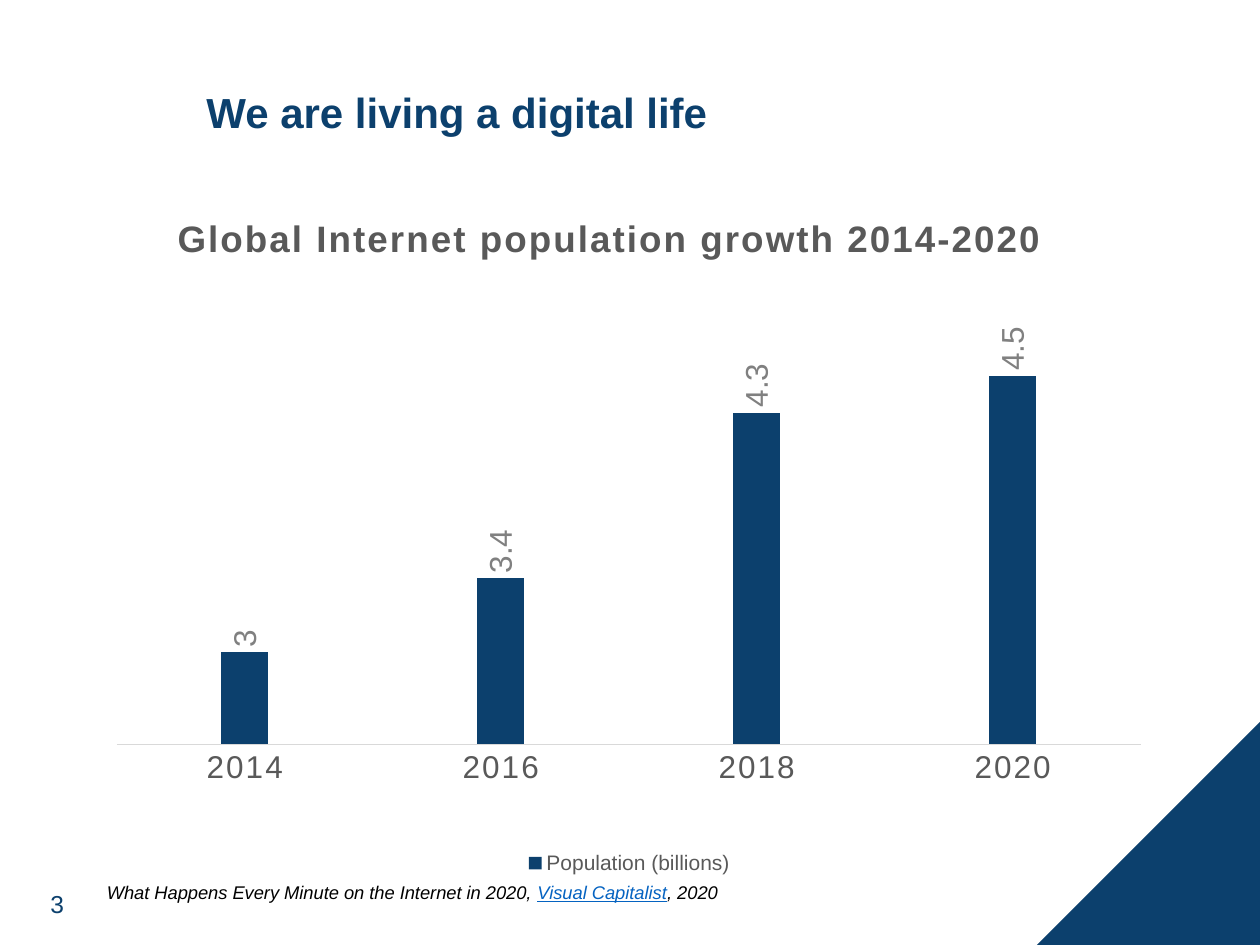
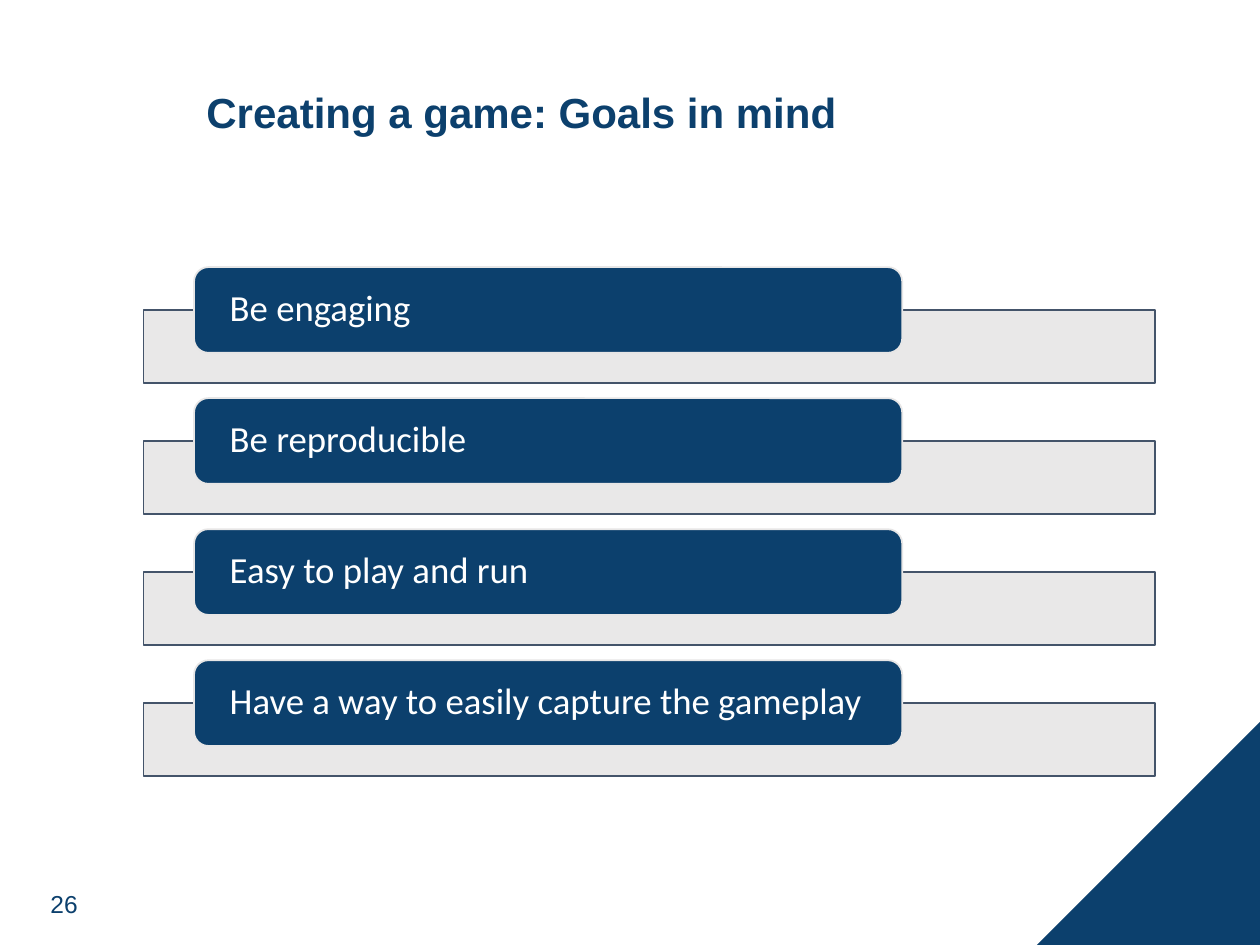
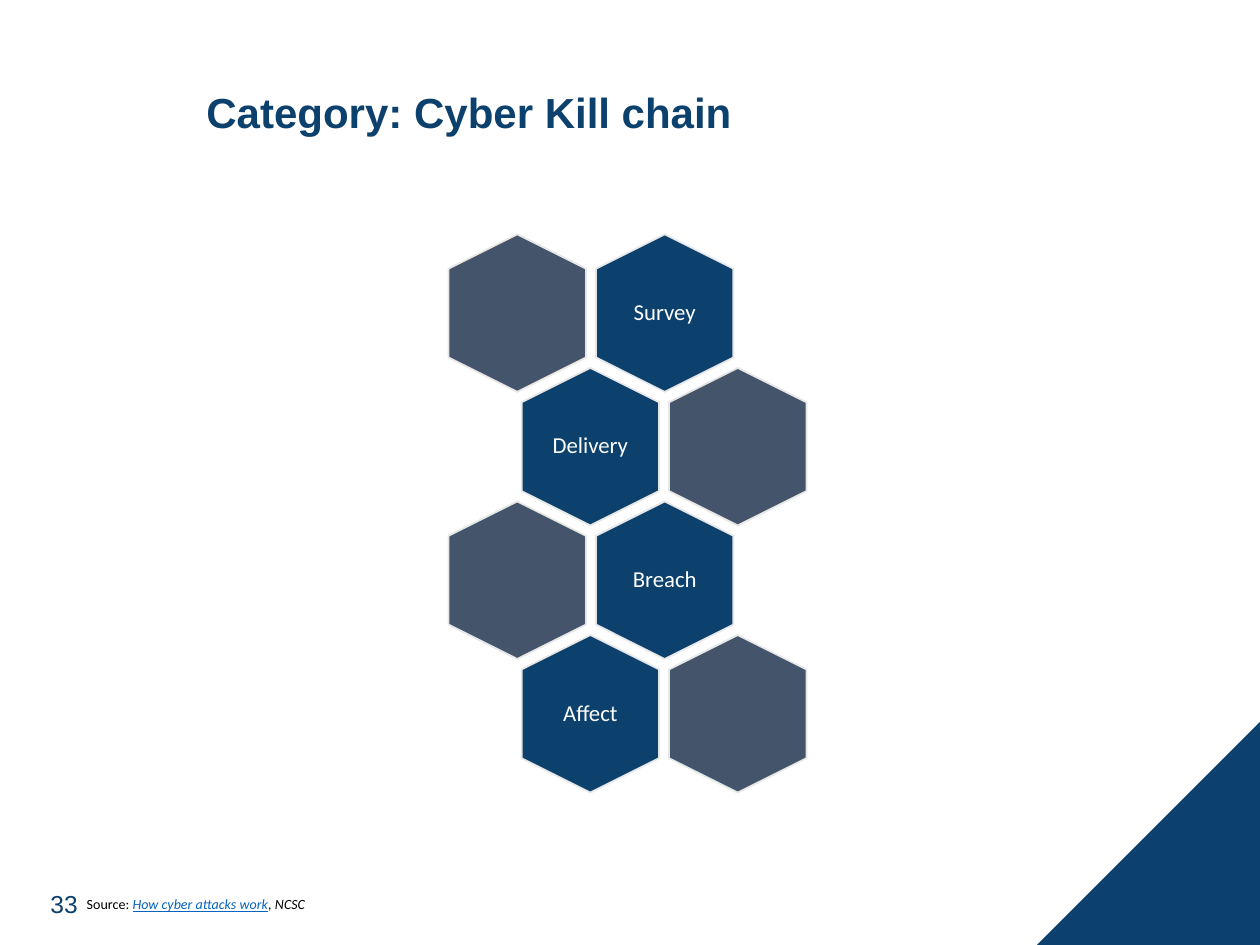
"""Build three slides on digital life, game goals and the cyber kill chain."""
from dataclasses import dataclass

from lxml.etree import SubElement
from pptx import Presentation
from pptx.chart.data import CategoryChartData
from pptx.dml.color import RGBColor
from pptx.enum.chart import XL_CHART_TYPE as ChartType
from pptx.enum.chart import XL_LABEL_POSITION as LabelPosition
from pptx.enum.chart import XL_LEGEND_POSITION as LegendPosition
from pptx.enum.chart import XL_TICK_MARK as TickMark
from pptx.enum.shapes import MSO_SHAPE as Preset
from pptx.enum.text import MSO_ANCHOR as Anchor
from pptx.enum.text import PP_ALIGN as Align
from pptx.oxml import parse_xml
from pptx.oxml.ns import nsdecls, qn
from pptx.util import Inches, Pt


@dataclass(frozen=True)
class Theme:
    heading: str = "Arial"
    body: str = "Calibri"
    navy: str = "0C406D"
    slate: str = "44546A"
    pale: str = "E7E6E6"
    white: str = "FFFFFF"
    black: str = "000000"
    link: str = "0563C1"
    chart_text: str = "595959"
    label_text: str = "808080"
    axis_line: str = "D9D9D9"
    title_size: float = 24
    chart_title_size: float = 21
    goal_size: float = 21
    axis_size: float = 18
    number_size: float = 14
    stage_size: float = 13
    legend_size: float = 12
    citation_size: float = 10.5
    source_size: float = 8
    tracking: str = "120"


THEME = Theme()

POPULATION = {
    "title": "Global Internet population growth 2014-2020",
    "series": "Population (billions)",
    "values": {"2014": 3, "2016": 3.4, "2018": 4.3, "2020": 4.5},
}
CITATION = [
    ("What Happens Every Minute on the Internet in 2020, ", "italic"),
    ("Visual Capitalist", "link"),
    (", 2020", "italic"),
]
GOALS = [
    "Be engaging",
    "Be reproducible",
    "Easy to play and run",
    "Have a way to easily capture the gameplay",
]
STAGES = ["Survey", "Delivery", "Breach", "Affect"]
SOURCE = [
    ("Source: ", "plain"),
    ("How cyber attacks work", "link"),
    (", NCSC", "italic"),
]


def color(value):
    return RGBColor.from_string(value)


def style_font(font, name, size, fill, bold=False):
    font.name = name
    font.size = Pt(size)
    font.color.rgb = color(fill)
    font.bold = bold


def set_frame(shape, insets=(0.1, 0.05), anchor=Anchor.MIDDLE):
    frame = shape.text_frame
    frame.word_wrap = True
    frame.vertical_anchor = anchor
    frame.margin_left = frame.margin_right = Inches(insets[0])
    frame.margin_top = frame.margin_bottom = Inches(insets[1])
    return frame.paragraphs[0]


def write(shape, text, name, size, fill, insets=(0.1, 0.05), bold=False, align=Align.LEFT):
    paragraph = set_frame(shape, insets)
    paragraph.text = text
    paragraph.alignment = align
    paragraph.line_spacing = 0.9
    style_font(paragraph.runs[0].font, name, size, fill, bold)


def add_textbox(slide, box):
    return slide.shapes.add_textbox(*map(Inches, box))


def add_reference(slide, box, parts, name, size):
    paragraph = set_frame(add_textbox(slide, box), anchor=Anchor.TOP)
    for text, kind in parts:
        run = paragraph.add_run()
        run.text = text
        style_font(run.font, name, size, THEME.link if kind == "link" else THEME.black)
        run.font.italic = kind != "plain"
        run.font.underline = kind == "link"


def add_block(slide, preset, box, fill, line=None, rotation=0):
    shape = slide.shapes.add_shape(preset, *map(Inches, box))
    shape.shadow.inherit = False
    shape.rotation = rotation
    shape.fill.solid()
    shape.fill.fore_color.rgb = color(fill)
    if line:
        shape.line.color.rgb = color(line)
        shape.line.width = Pt(1)
    else:
        shape.line.fill.background()
    return shape


def place_chart_part(element, index, **values):
    for layout in element.findall(qn("c:layout")):
        element.remove(layout)
    entries = "".join(f'<c:{key} val="{value}"/>' for key, value in values.items())
    element.insert(index, parse_xml(
        f'<c:layout {nsdecls("c")}><c:manualLayout>{entries}</c:manualLayout></c:layout>'))


def add_population(slide):
    data = CategoryChartData()
    data.categories = list(POPULATION["values"])
    data.add_series(POPULATION["series"], list(POPULATION["values"].values()))
    box = map(Inches, (0.33, 1.55, 9.33, 5.43))
    chart = slide.shapes.add_chart(ChartType.COLUMN_CLUSTERED, *box, data).chart
    style_font(chart.font, THEME.body, 10, THEME.black)

    chart.has_title = True
    paragraph = chart.chart_title.text_frame.paragraphs[0]
    paragraph.text = POPULATION["title"]
    style_font(paragraph.runs[0].font, THEME.heading, THEME.chart_title_size,
               THEME.chart_text, True)
    chart.has_legend = True
    chart.legend.position = LegendPosition.BOTTOM
    chart.legend.include_in_layout = False
    style_font(chart.legend.font, THEME.heading, THEME.legend_size, THEME.chart_text)

    years = chart.category_axis
    years.major_tick_mark = years.minor_tick_mark = TickMark.NONE
    years.format.line.color.rgb = color(THEME.axis_line)
    years.format.line.width = Pt(0.75)
    style_font(years.tick_labels.font, THEME.heading, THEME.axis_size, THEME.chart_text)
    billions = chart.value_axis
    billions.visible = billions.has_major_gridlines = False
    billions.minimum_scale, billions.maximum_scale = 2.5, 5
    billions.major_unit = 0.5

    plot = chart.plots[0]
    plot.vary_by_categories = False
    plot.gap_width, plot.overlap = 444, -90
    series = plot.series[0]
    series.format.fill.solid()
    series.format.fill.fore_color.rgb = color(THEME.navy)
    labels = series.data_labels
    labels.show_value = True
    labels.position = LabelPosition.OUTSIDE_END
    style_font(labels.font, THEME.heading, THEME.axis_size, THEME.label_text)

    def find(*tags):
        return chart.element.find(".//" + "//".join(map(qn, tags)))

    find("c:dLbls", "a:bodyPr").set("rot", "-5400000")
    find("c:dLbls", "a:bodyPr").set("vert", "horz")
    for tags in (("c:title", "a:rPr"), ("c:catAx", "a:defRPr")):
        find(*tags).set("spc", THEME.tracking)
    place_chart_part(find("c:title"), 1, xMode="edge", yMode="edge", x=0.11, y=0.02)
    place_chart_part(find("c:plotArea"), 0, layoutTarget="inner", xMode="edge",
                     yMode="edge", x=0.064, y=0.129, w=0.871, h=0.674)
    add_reference(slide, (0.75, 6.94, 8.74, 0.28), CITATION, THEME.heading,
                  THEME.citation_size)


def add_goals(slide):
    top, pitch = 2.12, 1.04
    for index, goal in enumerate(GOALS):
        y = top + index * pitch
        bar = add_block(slide, Preset.RECTANGLE, (1.14, y + 0.34, 8.03, 0.58),
                        THEME.pale, THEME.slate)
        SubElement(bar.fill.fore_color and bar.element.spPr.find(
            f"{qn('a:solidFill')}/{qn('a:srgbClr')}"), qn("a:alpha"), val="90000")
        card = add_block(slide, Preset.ROUNDED_RECTANGLE, (1.54, y, 5.62, 0.68),
                         THEME.navy, THEME.pale)
        write(card, goal, THEME.body, THEME.goal_size, THEME.white, (0.25, 0))


def add_kill_chain(slide):
    add_reference(slide, (0.59, 7.06, 5.2, 0.24), SOURCE, THEME.body, THEME.source_size)
    left, top, width, height = 3.48, 1.94, 1.25, 1.09
    column_pitch, row_pitch, row_shift = 1.17, 1.06, 0.58
    label_width, label_height = 0.75, 0.86
    for row, stage in enumerate(STAGES):
        y = top + row * row_pitch
        stage_column = 1 - row % 2
        for column in range(2):
            x = left + column * column_pitch + row % 2 * row_shift
            named = column == stage_column
            add_block(slide, Preset.HEXAGON, (x, y, width, height),
                      THEME.navy if named else THEME.slate, THEME.pale, 90)
            if named:
                label = add_textbox(slide, (x + (width - label_width) / 2,
                                            y + (height - label_height) / 2,
                                            label_width, label_height))
                write(label, stage, THEME.body, THEME.stage_size, THEME.white,
                      (0.05, 0.05), align=Align.CENTER)


SLIDES = [
    (3, "We are living a digital life", add_population),
    (26, "Creating a game: Goals in mind", add_goals),
    (33, "Category: Cyber Kill chain", add_kill_chain),
]


def main():
    presentation = Presentation()
    presentation.slide_width, presentation.slide_height = Inches(10), Inches(7.5)
    for number, title, add_content in SLIDES:
        slide = presentation.slides.add_slide(presentation.slide_layouts[6])
        write(add_textbox(slide, (0.33, 7.01, 0.41, 0.36)), str(number), THEME.heading,
              THEME.number_size, THEME.navy, (0.07, 0.04))
        write(add_textbox(slide, (1.54, 0.44, 8.13, 0.94)), title, THEME.heading,
              THEME.title_size, THEME.navy, bold=True)
        add_content(slide)
        add_block(slide, Preset.RIGHT_TRIANGLE, (8.23, 5.73, 1.77, 1.77), THEME.navy,
                  rotation=270)
    presentation.save("out.pptx")


if __name__ == "__main__":
    main()
